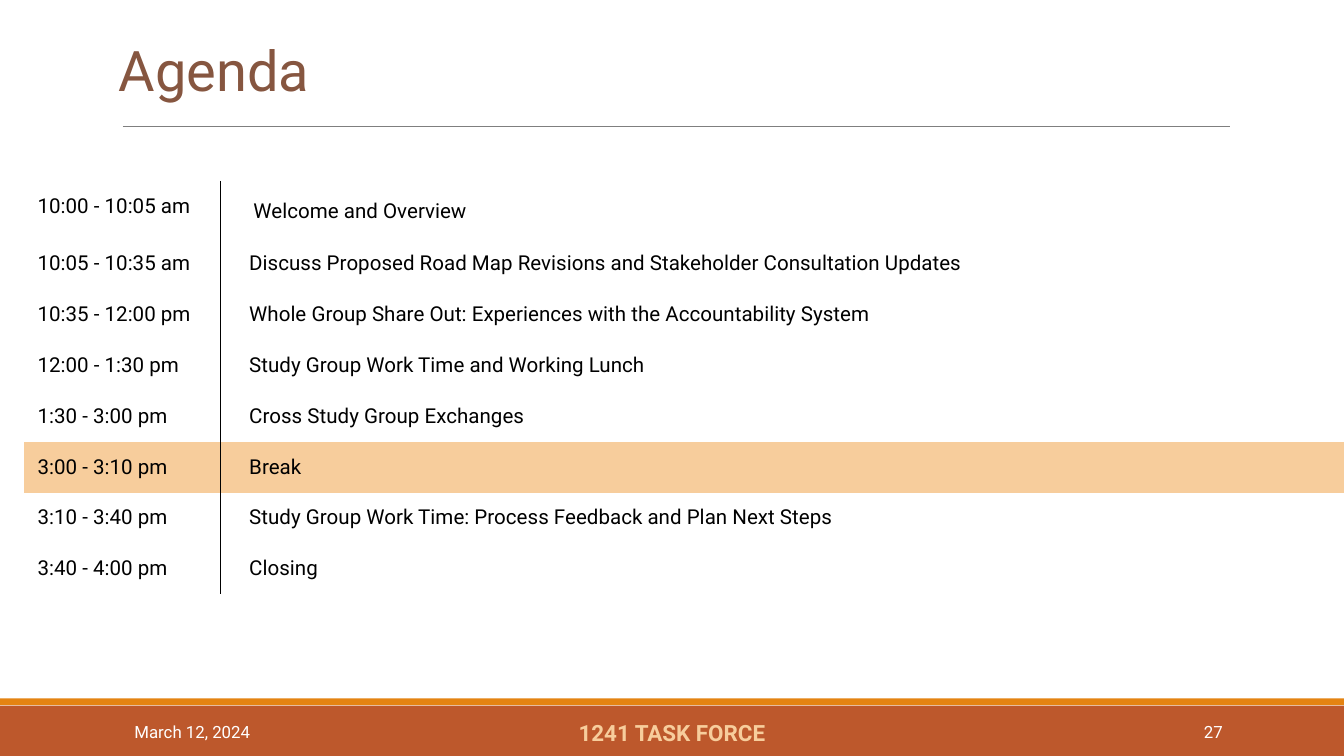
from pptx import Presentation
from pptx.dml.color import RGBColor
from pptx.enum.shapes import MSO_CONNECTOR, MSO_SHAPE
from pptx.enum.text import MSO_ANCHOR, PP_ALIGN
from pptx.oxml import parse_xml
from pptx.oxml.ns import nsdecls, qn
from pptx.util import Cm, Pt

FONT = "Roboto"
BLACK = RGBColor(0x00, 0x00, 0x00)
WHITE = RGBColor(0xFF, 0xFF, 0xFF)
GRAY = RGBColor(0x7F, 0x7F, 0x7F)
BROWN = RGBColor(0x86, 0x56, 0x40)
RUST = RGBColor(0xBD, 0x58, 0x2C)
ORANGE = RGBColor(0xE4, 0x83, 0x12)
PEACH = RGBColor(0xF7, 0xCD, 0x9C)
NO_STYLE = "{2D5ABB26-0587-4C30-8999-92F81FD0307C}"


def write_text(text_frame, text, size=11, color=BLACK, bold=False, align=PP_ALIGN.LEFT):
    paragraph = text_frame.paragraphs[0]
    paragraph.alignment = align
    run = paragraph.add_run()
    run.text = text
    run.font.name = FONT
    run.font.size = Pt(size)
    run.font.bold = bold
    run.font.color.rgb = color


def add_border(cell, side):
    border = parse_xml(
        f'<a:{side} {nsdecls("a")} w="{Pt(1)}"><a:solidFill>'
        f'<a:srgbClr val="{BLACK}"/></a:solidFill></a:{side}>'
    )
    cell._tc.get_or_add_tcPr().insert(0, border)


presentation = Presentation()
presentation.slide_width = Cm(25.4)
presentation.slide_height = Cm(14.29)
slide = presentation.slides.add_slide(presentation.slide_layouts[5])

for top, height, color in [(13.34, 0.95, RUST), (13.2, 0.13, ORANGE)]:
    band = slide.shapes.add_shape(MSO_SHAPE.RECTANGLE, 0, Cm(top), Cm(25.4), Cm(height))
    band.shadow.inherit = False
    band.fill.solid()
    band.fill.fore_color.rgb = color
    band.line.fill.background()

rule = slide.shapes.add_connector(
    MSO_CONNECTOR.STRAIGHT, Cm(2.32), Cm(2.39), Cm(23.24), Cm(2.39)
)
rule.line.color.rgb = GRAY
rule.line.width = Pt(0.75)
rule._element.spPr.append(parse_xml(f'<a:effectLst {nsdecls("a")}/>'))

title = slide.shapes.title
title.left, title.top, title.width, title.height = Cm(2.24), Cm(0.51), Cm(20.95), Cm(1.6)
title_frame = title.text_frame
title_frame.margin_left = title_frame.margin_right = 0
title_frame.margin_top = title_frame.margin_bottom = 0
title_frame.vertical_anchor = MSO_ANCHOR.MIDDLE
write_text(title_frame, "Agenda", size=30, color=BROWN)

agenda = [
    ("10:00 - 10:05 am", "Welcome and Overview"),
    ("10:05 - 10:35 am", "Discuss Proposed Road Map Revisions and Stakeholder Consultation Updates"),
    ("10:35 - 12:00 pm", "Whole Group Share Out: Experiences with the Accountability System"),
    ("12:00 - 1:30 pm", "Study Group Work Time and Working Lunch"),
    ("1:30 - 3:00 pm", "Cross Study Group Exchanges"),
    ("3:00 - 3:10 pm", "Break"),
    ("3:10 - 3:40 pm", "Study Group Work Time: Process Feedback and Plan Next Steps"),
    ("3:40 - 4:00 pm", "Closing"),
]
table = slide.shapes.add_table(
    len(agenda), 2, Cm(0.46), Cm(3.42), Cm(24.94), Cm(7.81)
).table
table.first_row = False
table.horz_banding = False
table._tbl.tblPr.find(qn("a:tableStyleId")).text = NO_STYLE
table.columns[0].width = Cm(3.71)
table.columns[1].width = Cm(21.23)

for row_index, entry in enumerate(agenda):
    table.rows[row_index].height = Cm(1.09 if row_index == 0 else 0.96)
    for column_index, text in enumerate(entry):
        cell = table.cell(row_index, column_index)
        cell.margin_left = Cm(0.54 if column_index else 0.25)
        cell.margin_right = cell.margin_top = cell.margin_bottom = Cm(0.25)
        if entry[1] == "Break":
            cell.fill.solid()
            cell.fill.fore_color.rgb = PEACH
        else:
            cell.fill.background()
        add_border(cell, "lnL" if column_index else "lnR")
        write_text(cell.text_frame, text)

welcome = table.cell(0, 1)
welcome.margin_left = Cm(0.62)
welcome.margin_top = Cm(0.35)

footers = [
    (20.62, 2.74, "27", 9, WHITE, False, PP_ALIGN.RIGHT),
    (2.29, 5.16, "March 12, 2024", 9, WHITE, False, PP_ALIGN.LEFT),
    (7.67, 10.06, "1241 TASK FORCE", 12, PEACH, True, PP_ALIGN.CENTER),
]
for left, width, text, size, color, bold, align in footers:
    footer = slide.shapes.add_textbox(Cm(left), Cm(13.46), Cm(width), Cm(0.76))
    footer.text_frame.word_wrap = True
    footer.text_frame.vertical_anchor = MSO_ANCHOR.MIDDLE
    write_text(footer.text_frame, text, size=size, color=color, bold=bold, align=align)

presentation.save("out.pptx")
